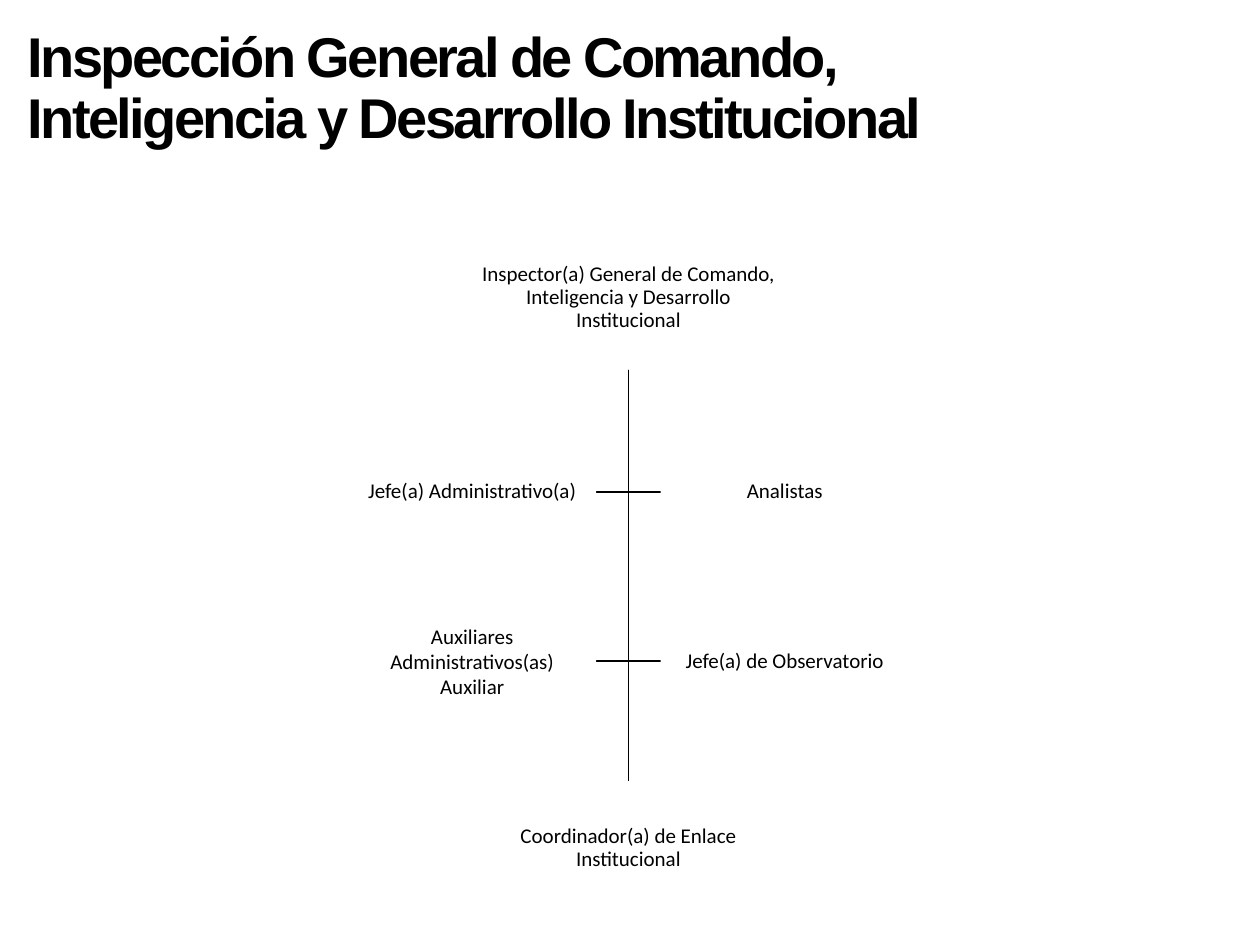
from dataclasses import dataclass

from lxml import etree
from pptx import Presentation
from pptx.dml.color import RGBColor
from pptx.enum import shapes, text
from pptx.oxml.ns import qn
from pptx.util import Cm, Pt

BLACK, WHITE = "000000", "FFFFFF"
TRUNK_X = 12.67
BOX_W, BOX_H, BRANCH = 5.0, 2.51, 0.65
ROW_Y = (9.92, 13.33)


@dataclass
class Post:
    label: str
    left: float
    top: float
    width: float = BOX_W
    height: float = BOX_H
    fill: str | None = WHITE
    spacing: float = 0.9


def rgb(value: str) -> RGBColor:
    return RGBColor.from_string(value)


def write(tf, content: str, *, font="Calibri", size=12, bold=False, color=BLACK,
          align=text.PP_ALIGN.CENTER, spacing=0.9, tracking=0.0) -> None:
    for i, line in enumerate(content.split("\n")):
        p = tf.paragraphs[0] if i == 0 else tf.add_paragraph()
        p.alignment, p.line_spacing = align, spacing
        p.space_before = Pt(0)
        r = p.add_run()
        r.text = line
        r.font.name, r.font.size, r.font.bold = font, Pt(size), bold
        r.font.color.rgb = rgb(color)
        if tracking:
            r._r.get_or_add_rPr().set("spc", str(round(tracking * 100)))


def draw_post(slide, post: Post):
    sp = slide.shapes.add_shape(shapes.MSO_SHAPE.RECTANGLE, Cm(post.left), Cm(post.top),
                                Cm(post.width), Cm(post.height))
    sp.shadow.inherit = False
    sp.line.fill.background()
    if post.fill:
        sp.fill.solid()
        sp.fill.fore_color.rgb = rgb(post.fill)
    else:
        sp.fill.background()
    tf = sp.text_frame
    tf.word_wrap = True
    tf.vertical_anchor = text.MSO_ANCHOR.MIDDLE
    tf.margin_left = tf.margin_right = tf.margin_top = tf.margin_bottom = Cm(0.03)
    write(tf, post.label, spacing=post.spacing)
    return sp


def style_line(sp) -> None:
    sp.line.color.rgb = rgb(BLACK)
    sp.line.width = Pt(1)


def draw_elbow(slide, top: float, side_x: float, side_y: float) -> None:
    fb = slide.shapes.build_freeform(Cm(TRUNK_X), Cm(top))
    fb.add_line_segments([(Cm(TRUNK_X), Cm(side_y)), (Cm(side_x), Cm(side_y))], close=False)
    sp = fb.convert_to_shape()
    sp.fill.background()
    sp.shadow.inherit = False
    style_line(sp)


def draw_trunk(slide, upper, lower) -> None:
    cx = slide.shapes.add_connector(shapes.MSO_CONNECTOR.STRAIGHT, 0, 0, 0, 0)
    cx.begin_connect(upper, 2)
    cx.end_connect(lower, 0)
    style_line(cx)
    etree.SubElement(cx._element.spPr, qn("a:effectLst"))


def main() -> None:
    prs = Presentation()
    prs.slide_width, prs.slide_height = Cm(25.4), Cm(19.05)
    slide = prs.slides.add_slide(prs.slide_layouts[5])

    # Title
    title = slide.shapes.title
    title.left, title.top, title.width, title.height = Cm(0.3), Cm(0.46), Cm(18.95), Cm(2.72)
    tf = title.text_frame
    tf.word_wrap = True
    tf.auto_size = text.MSO_AUTO_SIZE.SHAPE_TO_FIT_TEXT
    tf.vertical_anchor = text.MSO_ANCHOR.TOP
    write(tf, "Inspección General de Comando, Inteligencia y Desarrollo Institucional",
          font="Arial", size=32, bold=True, align=text.PP_ALIGN.LEFT, tracking=-1.5)

    # Posts at the two ends of the trunk
    head = Post("Inspector(a) General de Comando, Inteligencia y Desarrollo Institucional",
                TRUNK_X - 3.19, 4.55, 6.38, 2.9, fill=None)
    liaison = Post("Coordinador(a) de Enlace Institucional", TRUNK_X - 2.69, 15.75, 5.38, 2.69)

    # Posts on either side of the trunk
    left_x, right_x = TRUNK_X - BRANCH, TRUNK_X + BRANCH
    tops = [y - BOX_H / 2 for y in ROW_Y]
    staff = [
        Post("Jefe(a) Administrativo(a)", left_x - BOX_W, tops[0]),
        Post("Analistas", right_x, tops[0]),
        Post("Auxiliares Administrativos(as)\nAuxiliar", left_x - BOX_W, tops[1], spacing=1.0),
        Post("Jefe(a) de Observatorio", right_x, tops[1]),
    ]

    # Lines and boxes
    for y in ROW_Y:
        for x in (left_x, right_x):
            draw_elbow(slide, head.top + head.height, x, y)
    draw_trunk(slide, draw_post(slide, head), draw_post(slide, liaison))
    for post in staff:
        draw_post(slide, post)

    prs.save("out.pptx")


if __name__ == "__main__":
    main()
